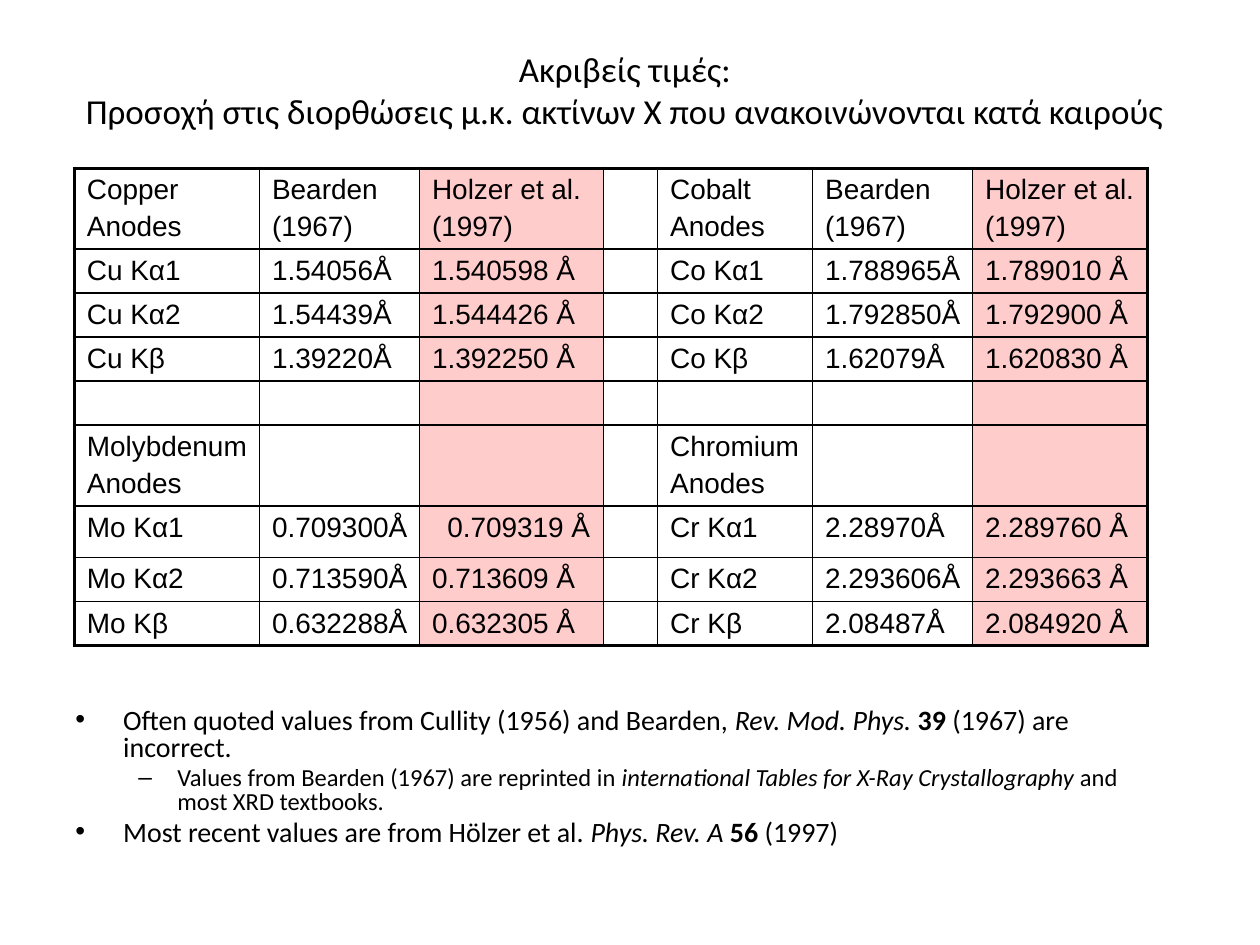
from dataclasses import dataclass
from pptx import Presentation, util as u
from pptx.dml.color import RGBColor
from pptx.enum import text
from pptx.oxml import parse_xml
from pptx.oxml.ns import nsdecls

W, H = 10, 7.5


@dataclass(frozen=True)
class Theme:
    ink: str = "000000"
    accent: str = "FFCCCC"
    head_font: str = "Calibri"
    table_font: str = "Arial"
    title: int = 20
    body: int = 16
    sub: int = 14
    thin: float = 1
    thick: float = 2.25


T = Theme()
COLS = [1.47, 1.27, 1.46, 0.43, 1.23, 1.27, 1.39]
ROWS = [0.64, 0.35, 0.35, 0.35, 0.35, 0.64, 0.41, 0.35, 0.35]
NEW_VALUE_COLS = (2, 6)
INDENTED = (6, 2)
BEARDEN, HOLZER = "Bearden\n(1967)", "Holzer et al.\n(1997)"
DATA = [
    ["Copper\nAnodes", BEARDEN, HOLZER, "", "Cobalt\nAnodes", BEARDEN, HOLZER],
    ["Cu Kα1", "1.54056Å", "1.540598 Å", "", "Co Kα1", "1.788965Å", "1.789010 Å"],
    ["Cu Kα2", "1.54439Å", "1.544426 Å", "", "Co Kα2", "1.792850Å", "1.792900 Å"],
    ["Cu Kβ", "1.39220Å", "1.392250 Å", "", "Co Kβ", "1.62079Å", "1.620830 Å"],
    [""] * 7,
    ["Molybdenum\nAnodes", "", "", "", "Chromium\nAnodes", "", ""],
    ["Mo Kα1", "0.709300Å", "0.709319 Å", "", "Cr Kα1", "2.28970Å", "2.289760 Å"],
    ["Mo Kα2", "0.713590Å", "0.713609 Å", "", "Cr Kα2", "2.293606Å", "2.293663 Å"],
    ["Mo Kβ", "0.632288Å", "0.632305 Å", "", "Cr Kβ", "2.08487Å", "2.084920 Å"],
]
# Each note: level, then (text, style) runs; style is "", "i" or "b"
NOTES = [
    (0, [("Often quoted values from Cullity (1956) and Bearden, ", ""),
         ("Rev. Mod. Phys. ", "i"), ("39", "b"), (" (1967) are incorrect.", "")]),
    (1, [("Values from Bearden (1967) are reprinted in ", ""),
         ("international Tables for X-Ray Crystallography", "i"),
         (" and most XRD textbooks.", "")]),
    (0, [("Most recent values are from Hölzer et al. ", ""),
         ("Phys. Rev. A ", "i"), ("56", "b"), (" (1997)", "")]),
]
# Level: left indent, hanging indent, bullet, type size
LEVELS = [(0.38, 0.38, "•", T.body), (0.81, 0.31, "–", T.sub)]


def add_run(p, words, size, font, style=""):
    r = p.add_run()
    r.text = words
    f = r.font
    f.size, f.name = u.Pt(size), font
    f.bold, f.italic = style == "b", style == "i"
    f.color.rgb = RGBColor.from_string(T.ink)


def add_frame(s, box):
    tf = s.shapes.add_textbox(*map(u.Inches, box)).text_frame
    tf.word_wrap = True
    return tf


def set_indent(p, left, first=0):
    pPr = p._p.get_or_add_pPr()
    pPr.set("marL", str(u.Inches(left)))
    pPr.set("indent", str(u.Inches(first)))
    return pPr


def set_borders(cell, row, col):
    """Thick lines on the outer edge of the table, thin ones inside."""
    outer = {"L": col == 0, "R": col == len(COLS) - 1,
             "T": row == 0, "B": row == len(ROWS) - 1}
    tcPr = cell._tc.get_or_add_tcPr()
    for i, (side, edge) in enumerate(outer.items()):
        width = u.Pt(T.thick if edge else T.thin)
        tcPr.insert(i, parse_xml(
            f'<a:ln{side} {nsdecls("a")} w="{width}"><a:solidFill>'
            f'<a:srgbClr val="{T.ink}"/></a:solidFill></a:ln{side}>'))


def fill_cell(cell, words, row, col):
    if col in NEW_VALUE_COLS:
        cell.fill.solid()
        cell.fill.fore_color.rgb = RGBColor.from_string(T.accent)
    else:
        cell.fill.background()
    set_borders(cell, row, col)
    cell.margin_right, cell.margin_bottom = u.Inches(0.05), 0
    tf = cell.text_frame
    for i, line in enumerate(words.split("\n")):
        p = tf.add_paragraph() if i else tf.paragraphs[0]
        p.space_before = u.Pt(0.2 * T.body)
        if (row, col) == INDENTED:
            set_indent(p, 0.12)
        if line:
            add_run(p, line, T.body, T.table_font)
        else:
            p._p.append(parse_xml(
                f'<a:endParaRPr {nsdecls("a")} sz="{T.body * 100}"/>'))


def title(s, box):
    tf = add_frame(s, box)
    tf.vertical_anchor = text.MSO_ANCHOR.MIDDLE
    p = tf.paragraphs[0]
    p.alignment = text.PP_ALIGN.CENTER
    add_run(p, "Ακριβείς τιμές:", T.title, T.head_font)
    p.add_line_break()
    add_run(p, "Προσοχή στις διορθώσεις μ.κ. ακτίνων X που ανακοινώνονται κατά καιρούς",
            T.title, T.head_font)


def wavelength_table(s, box):
    """Column and row sizes are shared out over the box."""
    x, y, w, h = box
    table = s.shapes.add_table(len(ROWS), len(COLS), *map(u.Inches, box)).table
    table.first_row = table.horz_banding = False
    for column, share in zip(table.columns, COLS):
        column.width = u.Inches(w * share / sum(COLS))
    for row, share in zip(table.rows, ROWS):
        row.height = u.Inches(h * share / sum(ROWS))
    for i, line in enumerate(DATA):
        for j, words in enumerate(line):
            fill_cell(table.cell(i, j), words, i, j)


def notes_list(s, box):
    tf = add_frame(s, box)
    for i, (level, runs) in enumerate(NOTES):
        left, hang, bullet, size = LEVELS[level]
        p = tf.add_paragraph() if i else tf.paragraphs[0]
        p.level = level
        p.line_spacing, p.space_before = 0.8, u.Pt(0.2 * size)
        pPr = set_indent(p, left, -hang)
        pPr.append(parse_xml(f'<a:buFont {nsdecls("a")} typeface="{T.table_font}"/>'))
        pPr.append(parse_xml(f'<a:buChar {nsdecls("a")} char="{bullet}"/>'))
        for words, style in runs:
            add_run(p, words, size, T.head_font, style)


def main():
    prs = Presentation()
    prs.slide_width, prs.slide_height = u.Inches(W), u.Inches(H)
    s = prs.slides.add_slide(prs.slide_layouts[6])
    title(s, (0.017 * W, 0.04 * H, 0.958 * W, 0.11 * H))
    wavelength_table(s, (0.059 * W, 0.178 * H, sum(COLS), sum(ROWS)))
    notes_list(s, (0.05 * W, 0.744 * H, 0.883 * W, 0.21 * H))
    prs.save("out.pptx")


if __name__ == "__main__":
    main()
